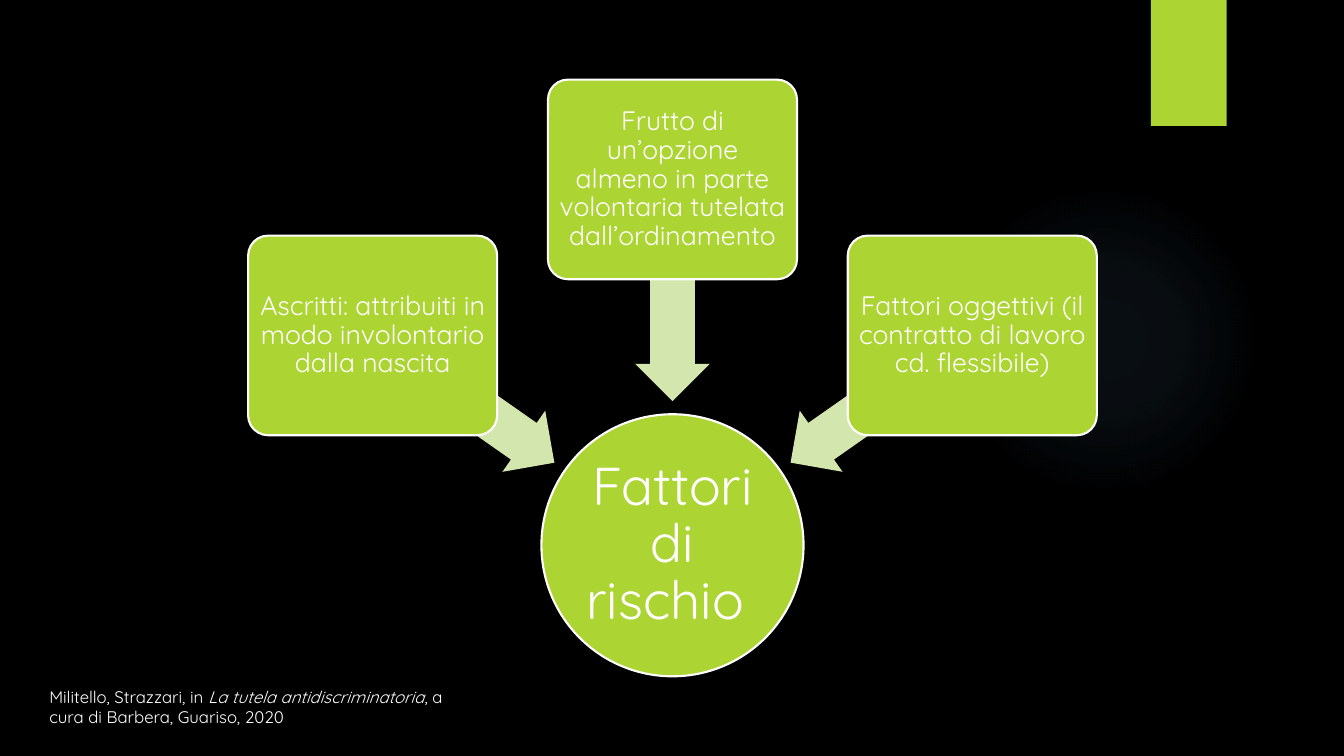
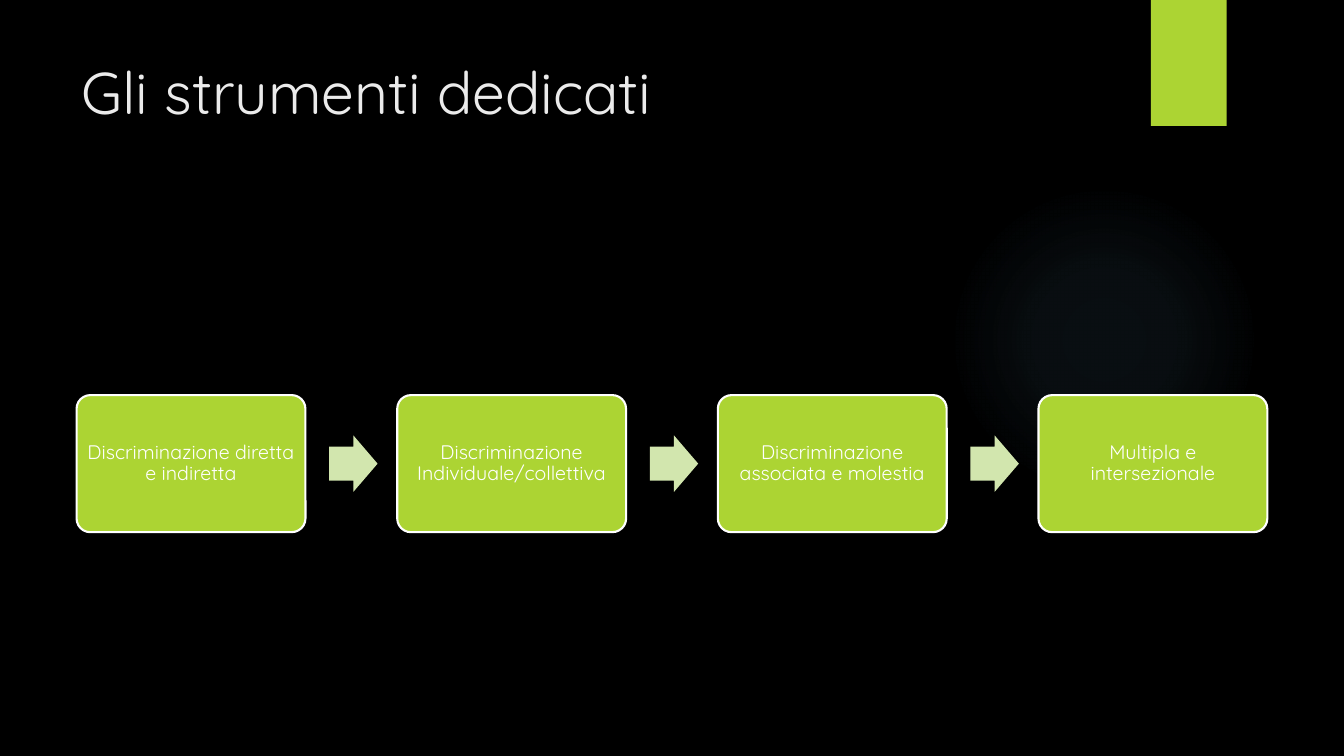
"""Build two slides on discrimination risk factors and the tools against them."""
from math import cos, radians, sin

from pptx import Presentation
from pptx.dml.color import RGBColor
from pptx.enum.shapes import MSO_SHAPE as Shape
from pptx.enum.text import MSO_ANCHOR as Anchor, PP_ALIGN as Align
from pptx.oxml import parse_xml
from pptx.util import Inches, Pt

BLACK = RGBColor(0x00, 0x00, 0x00)
WHITE = RGBColor(0xFF, 0xFF, 0xFF)
LIGHT = RGBColor(0xEB, 0xEB, 0xEB)
GREEN = RGBColor(0xAC, 0xD4, 0x33)
PALE = RGBColor(0xD2, 0xE6, 0xAE)
GLOW = RGBColor(0x7A, 0xC4, 0xF0)
FONT = "Quicksand"
GLOW_STOPS = [(0, 7), (36, 6), (69, 0)]
NS = "http://schemas.openxmlformats.org/drawingml/2006/main"

HUB = "Fattori di rischio "
FACTORS = [
    "Ascritti: attribuiti in modo involontario dalla nascita",
    "Frutto di un’opzione almeno in parte volontaria tutelata dall’ordinamento",
    "Fattori oggettivi (il contratto di lavoro cd. flessibile)",
]
SOURCE = [
    ("Militello, Strazzari, in ", False),
    ("La tutela antidiscriminatoria", True),
    (", a cura di Barbera, Guariso, 2020", False),
]
TITLE = "Gli strumenti dedicati"
TOOLS = [
    "Discriminazione diretta e indiretta",
    "Discriminazione Individuale/collettiva",
    "Discriminazione associata e molestia",
    "Multipla e intersezionale",
]

HUB_X, HUB_Y, HUB_SIZE = 6.67, 5.41, 2.6
ARROW_RADIUS, BOX_RADIUS, FAN_STEP = 2.53, 3.63, 55
TOOL_LEFT, TOOL_PITCH, TOOL_MID = 0.76, 3.18, 4.6


def write(sp, text, size, color=WHITE, align=Align.LEFT, anchor=Anchor.TOP,
          inset=None, spacing=None):
    tf = sp.text_frame
    tf.word_wrap = True
    tf.vertical_anchor = anchor
    if inset is not None:
        tf.margin_left = tf.margin_right = Inches(inset)
        tf.margin_top = tf.margin_bottom = Inches(inset)
    p = tf.paragraphs[0]
    p.alignment = align
    if spacing:
        p.line_spacing = spacing
    for words, italic in [(text, False)] if isinstance(text, str) else text:
        r = p.add_run()
        r.text = words
        r.font.name, r.font.size, r.font.italic = FONT, Pt(size), italic
        r.font.color.rgb = color


def add_text(s, x, y, w, h, text, size, **style):
    box = s.shapes.add_textbox(Inches(x), Inches(y), Inches(w), Inches(h))
    write(box, text, size, **style)


def add_shape(s, kind, cx, cy, w, h, fill, adj=()):
    sp = s.shapes.add_shape(kind, Inches(cx - w / 2), Inches(cy - h / 2),
                            Inches(w), Inches(h))
    sp.shadow.inherit = False
    sp.fill.solid()
    sp.fill.fore_color.rgb = fill
    sp.line.fill.background()
    for i, value in enumerate(adj):
        sp.adjustments[i] = value
    return sp


def add_node(s, kind, cx, cy, w, h, text, size, inset, adj=()):
    sp = add_shape(s, kind, cx, cy, w, h, GREEN, adj)
    sp.line.color.rgb = WHITE
    sp.line.width = Pt(1.5)
    write(sp, text, size, align=Align.CENTER, anchor=Anchor.MIDDLE,
          inset=inset, spacing=0.9)


def add_arrow(s, kind, cx, cy, w, h, rotation=0):
    sp = add_shape(s, kind, cx, cy, w, h, PALE, (0.6, 0.5))
    sp.rotation = rotation


def add_glow(s):
    sp = add_shape(s, Shape.OVAL, 10.95, 3.37, 3.08, 3.08, GLOW)
    stops = "".join(
        f'<a:gs pos="{pos * 1000}"><a:srgbClr val="{GLOW}">'
        f'<a:alpha val="{alpha * 1000}"/></a:srgbClr></a:gs>'
        for pos, alpha in GLOW_STOPS)
    grad = parse_xml(
        f'<a:gradFill xmlns:a="{NS}" rotWithShape="1"><a:gsLst>{stops}</a:gsLst>'
        '<a:path path="circle"><a:fillToRect l="50000" t="50000" r="50000" '
        'b="50000"/></a:path></a:gradFill>')
    pr = sp.element.spPr
    pr.replace(pr.find(f"{{{NS}}}solidFill"), grad)


def new_slide(prs):
    s = prs.slides.add_slide(prs.slide_layouts[6])
    add_glow(s)
    add_shape(s, Shape.RECTANGLE, 11.79, 0.625, 0.75, 1.25, GREEN)
    return s


def factors_slide(prs):
    s = new_slide(prs)
    add_node(s, Shape.OVAL, HUB_X, HUB_Y, HUB_SIZE, HUB_SIZE, HUB, 38, 0.03)
    for i, text in enumerate(FACTORS):
        angle = 270 + FAN_STEP * (i - 1)
        dx, dy = cos(radians(angle)), sin(radians(angle))
        add_arrow(s, Shape.LEFT_ARROW, HUB_X + ARROW_RADIUS * dx,
                  HUB_Y + ARROW_RADIUS * dy, 2.2, 0.74, angle)
        add_node(s, Shape.ROUNDED_RECTANGLE, HUB_X + BOX_RADIUS * dx,
                 HUB_Y + BOX_RADIUS * dy, 2.47, 1.98, text, 19, 0.04, (0.1,))
    add_text(s, 0.39, 6.76, 4.35, 0.5, SOURCE, 12)


def tools_slide(prs):
    s = new_slide(prs)
    add_text(s, 0.71, 0.5, 10.29, 1.53, TITLE, 42, color=LIGHT)
    for i, text in enumerate(TOOLS):
        cx = TOOL_LEFT + 2.27 / 2 + i * TOOL_PITCH
        if i:
            add_arrow(s, Shape.RIGHT_ARROW, cx - 1.57, TOOL_MID, 0.48, 0.56)
        add_node(s, Shape.ROUNDED_RECTANGLE, cx, TOOL_MID, 2.27, 1.36, text,
                 14, 0.06, (0.1,))


def main():
    prs = Presentation()
    prs.slide_width, prs.slide_height = Inches(13.33), Inches(7.5)
    fill = prs.slide_master.background.fill
    fill.solid()
    fill.fore_color.rgb = BLACK
    factors_slide(prs)
    tools_slide(prs)
    prs.save("out.pptx")


if __name__ == "__main__":
    main()
